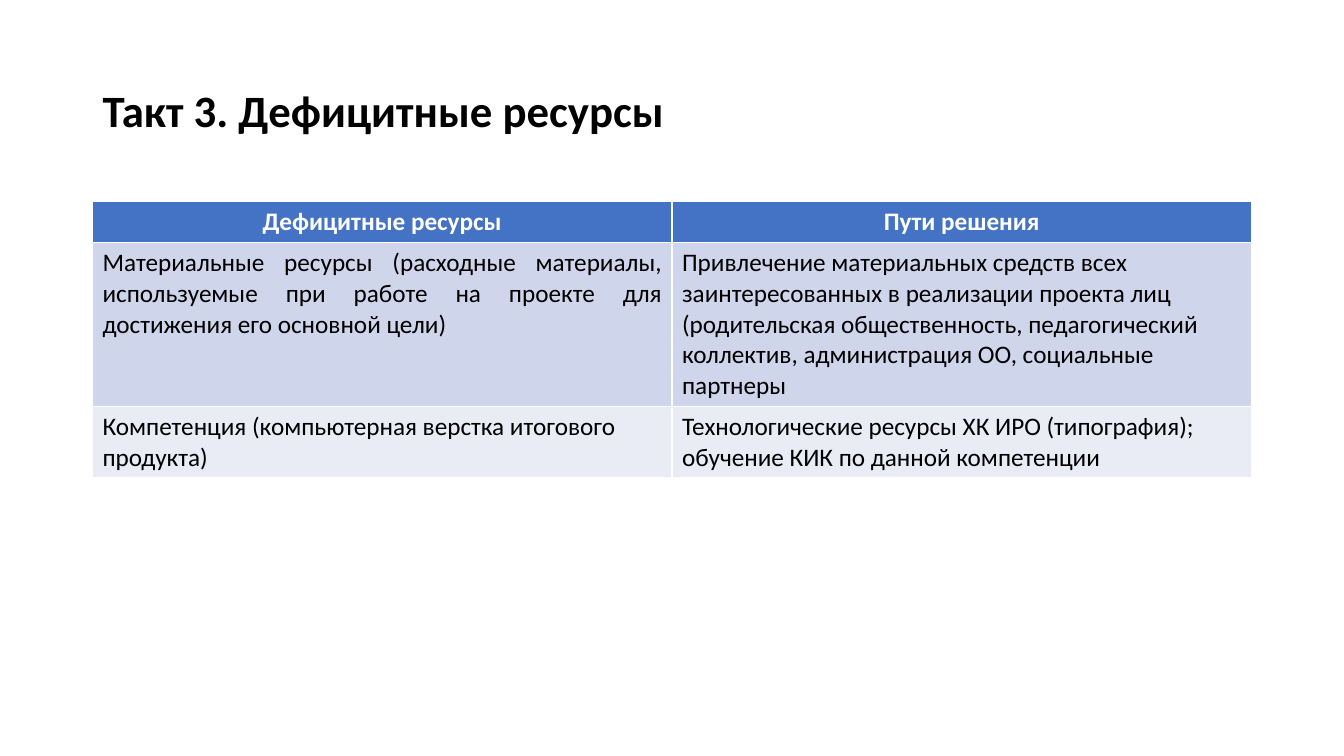
from pptx import Presentation
from pptx.dml.color import RGBColor
from pptx.enum.text import MSO_ANCHOR, PP_ALIGN
from pptx.util import Cm, Pt

BLACK = RGBColor(0x00, 0x00, 0x00)
WHITE = RGBColor(0xFF, 0xFF, 0xFF)
BLUE = RGBColor(0x44, 0x72, 0xC4)
MID = RGBColor(0xCF, 0xD5, 0xEA)
PALE = RGBColor(0xE9, 0xEB, 0xF5)


def put(frame, text, size=18, color=BLACK, bold=False, align=PP_ALIGN.LEFT, space=1.0):
    para = frame.paragraphs[0]
    para.alignment = align
    para.line_spacing = space
    run = para.add_run()
    run.text = text
    run.font.name = "Calibri"
    run.font.size = Pt(size)
    run.font.bold = bold
    run.font.color.rgb = color


deck = Presentation()
deck.slide_width = Cm(33.87)
deck.slide_height = Cm(19.05)
slide = deck.slides.add_slide(deck.slide_layouts[5])

title = slide.shapes.title
title.left, title.top = Cm(2.33), Cm(1.01)
title.width, title.height = Cm(26.4), Cm(3.68)
title.text_frame.vertical_anchor = MSO_ANCHOR.MIDDLE
put(title.text_frame, "Такт 3. Дефицитные ресурсы", size=32, bold=True, space=0.9)

rows = [
    ("Дефицитные ресурсы", "Пути решения"),
    (
        "Материальные ресурсы (расходные материалы, используемые при работе "
        "на проекте для достижения его основной цели)",
        "Привлечение материальных средств всех заинтересованных в реализации "
        "проекта лиц (родительская общественность, педагогический коллектив, "
        "администрация ОО, социальные партнеры",
    ),
    (
        "Компетенция (компьютерная верстка итогового продукта)",
        "Технологические ресурсы ХК ИРО (типография); обучение КИК по данной компетенции",
    ),
]
fills = [BLUE, MID, PALE]
tall = [Cm(1.03), Cm(4.08), Cm(1.78)]
table = slide.shapes.add_table(3, 2, Cm(2.33), Cm(5.08), Cm(29.21), sum(tall)).table

for r, texts in enumerate(rows):
    table.rows[r].height = tall[r]
    for c, text in enumerate(texts):
        cell = table.cell(r, c)
        cell.fill.solid()
        cell.fill.fore_color.rgb = fills[r]
        if r == 0:
            put(cell.text_frame, text, color=WHITE, bold=True, align=PP_ALIGN.CENTER)
        elif (r, c) == (1, 0):
            put(cell.text_frame, text, align=PP_ALIGN.JUSTIFY)
        else:
            put(cell.text_frame, text)

deck.save("out.pptx")
